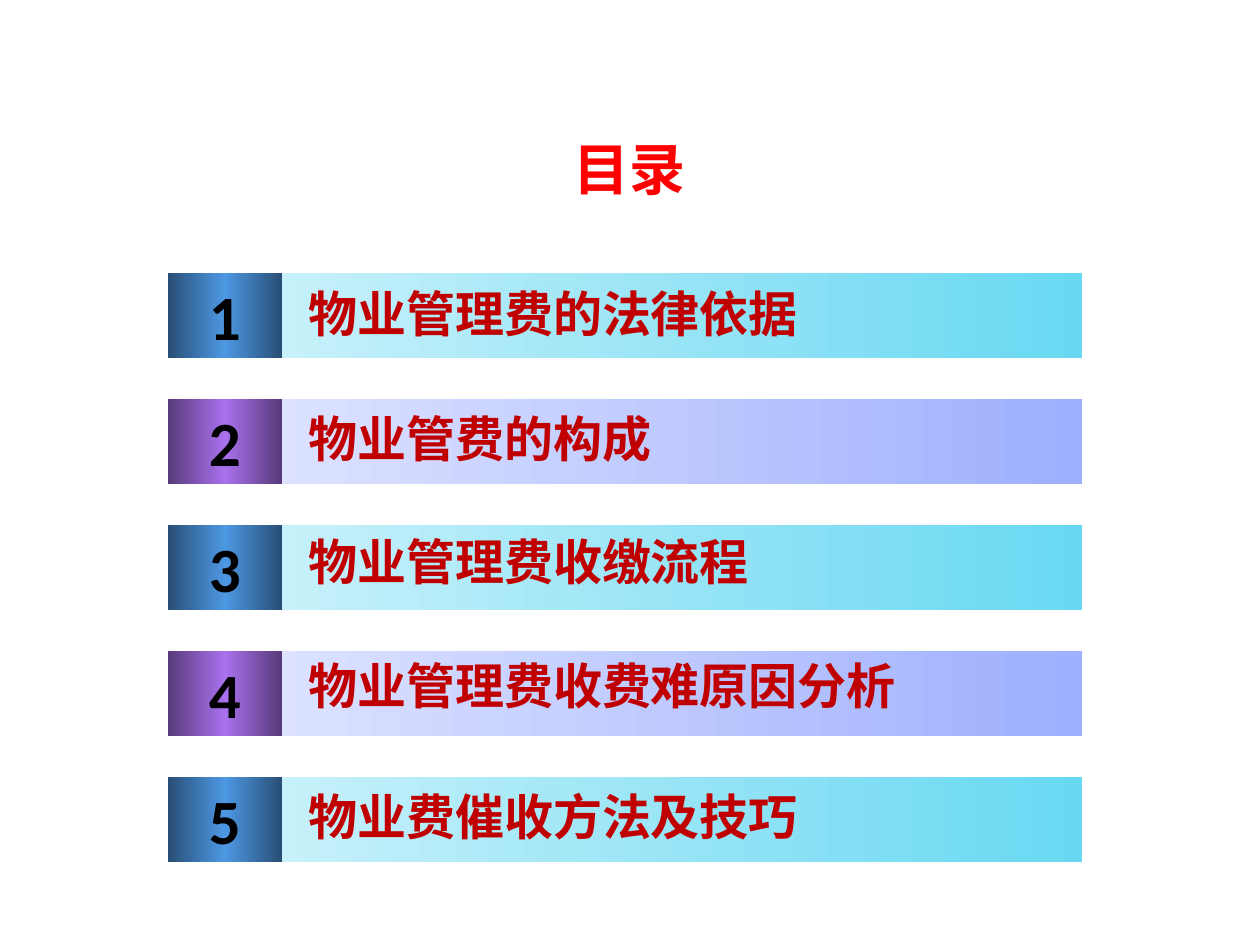
from lxml.etree import SubElement
from pptx import Presentation
from pptx.dml.color import RGBColor
from pptx.enum.shapes import MSO_SHAPE as Shape
from pptx.enum.text import MSO_ANCHOR as Anchor, MSO_AUTO_SIZE as AutoSize, PP_ALIGN as Align
from pptx.oxml.ns import qn
from pptx.util import Inches, Pt

COLORS = {"title": "FF0000", "item": "C00000", "number": "000000"}
# Gradient stops, evenly spaced from left to right: (number box, bar)
BLUE = (("284E75", "4D98E3", "284E75"), ("C8F1FA", "68D8F2"))
PURPLE = (("573A7A", "A971ED", "573A7A"), ("DCE2FF", "9EB0FE"))

# Item text and the top of its text box
ITEMS = [
    ("物业管理费的法律依据", 2.2),
    ("物业管费的构成", 3.19),
    ("物业管理费收缴流程", 4.17),
    ("物业管理费收费难原因分析", 5.15),
    ("物业费催收方法及技巧", 6.19),
]
FIRST_TOP, ROW_STEP, ROW_HEIGHT = 2.17, 1, 0.67


class SlideBuilder:
    cjk_font = "Noto Sans CJK SC"
    number_font = "Calibri"

    def __init__(self, prs):
        self.slide = prs.slides.add_slide(prs.slide_layouts[5])

    def set_text(self, tf, text, size, color, font, align):
        p = tf.paragraphs[0]
        r = p.add_run()
        r.text = text
        p.alignment = align
        p.font.size = Pt(size)
        p.font.bold = True
        p.font.name = font
        p.font.color.rgb = RGBColor.from_string(COLORS[color])
        # Chinese glyphs take the East Asian typeface
        SubElement(r.font._element, qn("a:ea"), typeface=font)

    def title(self, text):
        sp = self.slide.shapes.title
        sp.left, sp.top, sp.width, sp.height = map(Inches, (0, 0.92, 10, 0.83))
        sp.text_frame.vertical_anchor = Anchor.MIDDLE
        self.set_text(sp.text_frame, text, 32, "title", self.cjk_font, Align.CENTER)

    def gradient_box(self, left, top, width, stops):
        sp = self.slide.shapes.add_shape(
            Shape.RECTANGLE, Inches(left), Inches(top), Inches(width), Inches(ROW_HEIGHT))
        sp.shadow.inherit = False
        sp.line.fill.background()
        sp.fill.gradient()
        sp.fill.gradient_angle = 0
        stop_list = sp._element.spPr.find(qn("a:gradFill")).find(qn("a:gsLst"))
        for old in list(stop_list):
            stop_list.remove(old)
        for i, color in enumerate(stops):
            stop = SubElement(stop_list, qn("a:gs"), pos=str(100000 * i // (len(stops) - 1)))
            SubElement(stop, qn("a:srgbClr"), val=color)
        return sp

    def number_box(self, number, top, stops):
        tf = self.gradient_box(1.33, top, 0.91, stops).text_frame
        tf.word_wrap = False
        tf.vertical_anchor = Anchor.MIDDLE
        self.set_text(tf, str(number), 36, "number", self.number_font, Align.CENTER)

    def item_text(self, text, top):
        tf = self.slide.shapes.add_textbox(
            Inches(2.35), Inches(top), Inches(6.01), Inches(0.57)).text_frame
        tf.word_wrap = True
        tf.auto_size = AutoSize.SHAPE_TO_FIT_TEXT
        self.set_text(tf, text, 28, "item", self.cjk_font, Align.LEFT)


def main():
    prs = Presentation()
    prs.slide_width, prs.slide_height = Inches(10), Inches(7.5)
    s = SlideBuilder(prs)
    s.title("目录")

    # Contents rows, alternating blue and purple
    for i, (text, text_top) in enumerate(ITEMS):
        top = FIRST_TOP + i * ROW_STEP
        number_stops, bar_stops = PURPLE if i % 2 else BLUE
        s.gradient_box(2.13, top, 6.46, bar_stops)
        s.number_box(i + 1, top, number_stops)
        s.item_text(text, text_top)

    prs.save("out.pptx")


if __name__ == "__main__":
    main()
